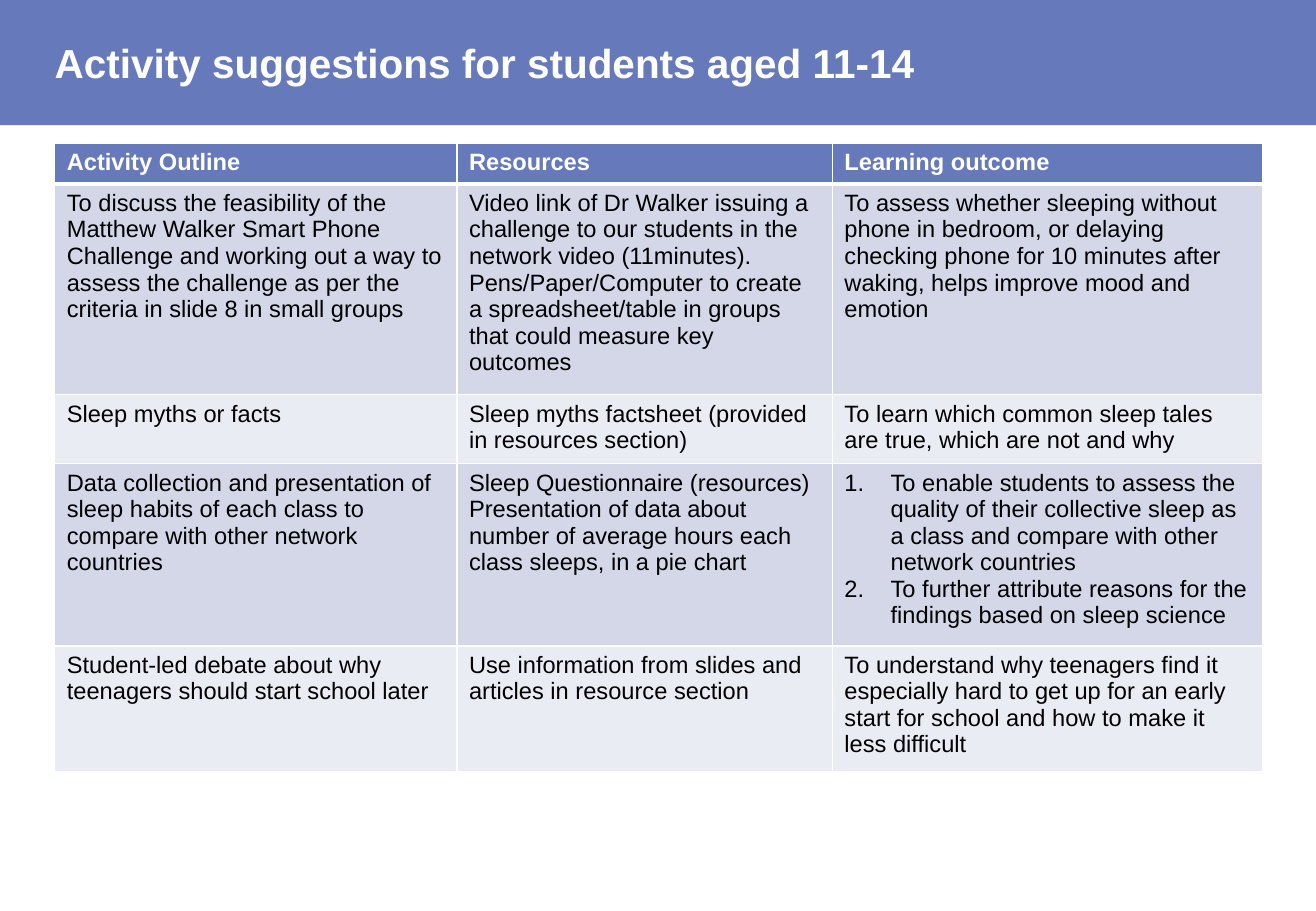
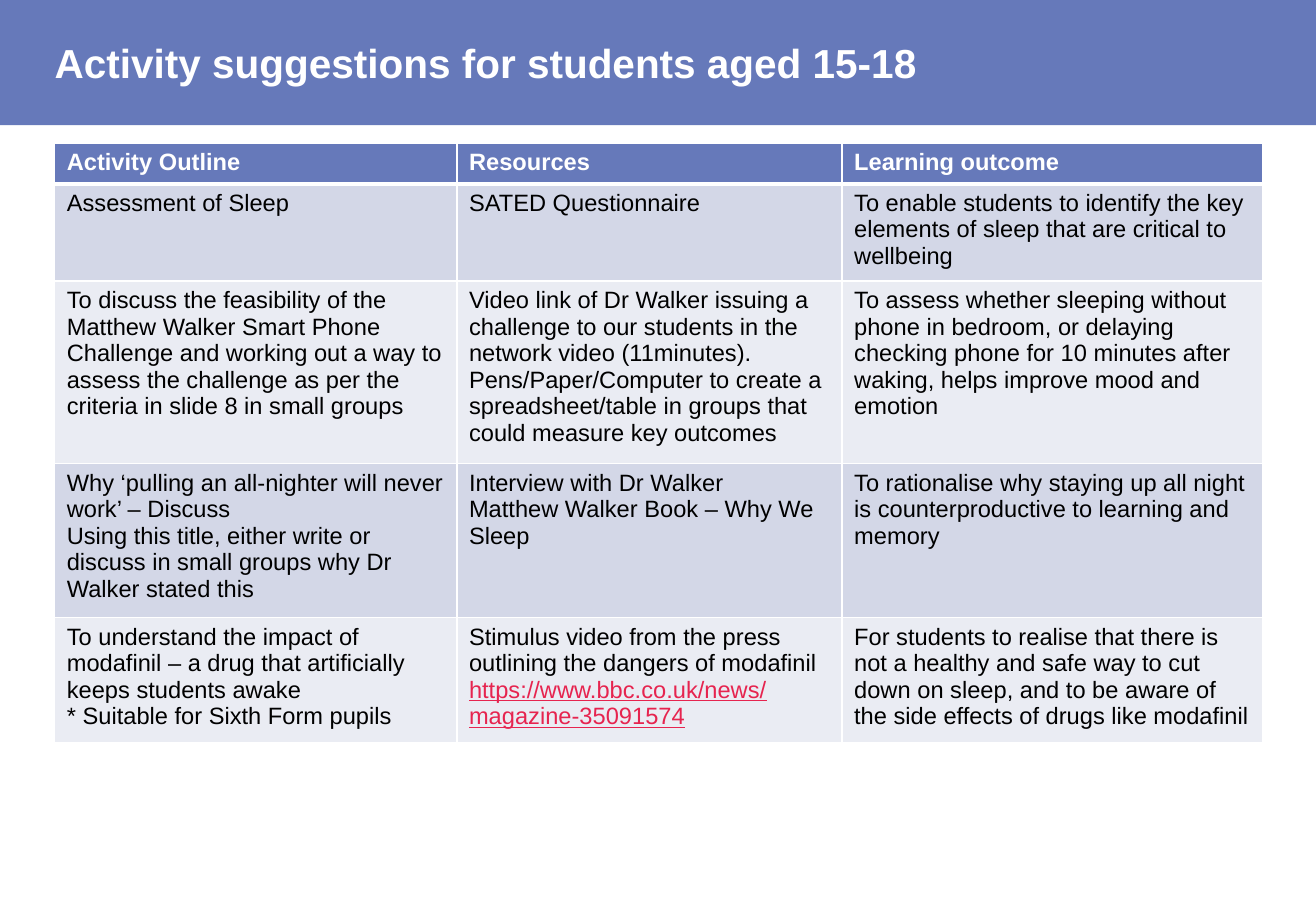
"""Build two slides of sleep activity suggestions, one per age group."""
import dataclasses

import lxml.etree
import pptx
import pptx.dml.color
import pptx.enum.shapes
import pptx.enum.text
import pptx.oxml.ns
import pptx.util

Inches = pptx.util.Inches
Pt = pptx.util.Pt
qn = pptx.oxml.ns.qn

FONT = "Arial"
BLUE, WHITE, BLACK, LINK = "6679BA", "FFFFFF", "000000", "E6244F"
ROW_FILLS = ("D3D7E7", "EAECF3")
SLIDE_W, SLIDE_H = 10.83, 7.5
BAND_H = 1.03
LEFT, CONTENT_W = 0.45, 9.94
TITLE_TOP, TITLE_H = 0.12, 0.79
TABLE_TOP, HEADER_H = 1.18, 0.31
THIN, THICK = 1, 3
HEADERS = ("Activity Outline", "Resources", "Learning outcome")


@dataclasses.dataclass(frozen=True)
class Activity:
    outline: str
    resources: str
    outcome: str
    height: float
    numbered_outcome: bool = False


@dataclasses.dataclass(frozen=True)
class Page:
    ages: str
    widths: tuple[float, ...]
    activities: tuple[Activity, ...]


PHONE_CHALLENGE = Activity(
    "To discuss the feasibility of the Matthew Walker Smart Phone Challenge and working out "
    "a way to assess the challenge as per the criteria in slide 8 in small groups",
    "Video link of Dr Walker issuing a challenge to our students in the network video (11minutes).\n"
    "Pens/Paper/Computer to create a spreadsheet/table in groups that could measure key outcomes",
    "To assess whether sleeping without phone in bedroom, or delaying checking phone for "
    "10 minutes after waking, helps improve mood and emotion",
    1.62,
)

PAGES = (
    Page("11-14", (3.31, 3.09, 3.54), (
        PHONE_CHALLENGE,
        Activity(
            "Sleep myths or facts",
            "Sleep myths factsheet (provided in resources section)",
            "To learn which common sleep tales are true, which are not and why",
            0.54,
        ),
        Activity(
            "Data collection and presentation of sleep habits of each class to compare "
            "with other network countries",
            "Sleep Questionnaire (resources)\n"
            "Presentation of data about number of average hours each class sleeps, in a pie chart",
            "To enable students to assess the quality of their collective sleep as a class "
            "and compare with other network countries\n"
            "To further attribute reasons for the findings based on sleep science",
            1.41,
            numbered_outcome=True,
        ),
        Activity(
            "Student-led debate about why teenagers should start school later",
            "Use information from slides and articles in resource section",
            "To understand why teenagers find it especially hard to get up for an early start "
            "for school and how to make it less difficult",
            0.97,
        ),
    )),
    Page("15-18", (3.31, 3.17, 3.46), (
        Activity(
            "Assessment of Sleep",
            "SATED Questionnaire",
            "To enable students to identify the key elements of sleep that are critical to wellbeing",
            0.75,
        ),
        dataclasses.replace(PHONE_CHALLENGE, height=1.41),
        Activity(
            "Why ‘pulling an all-nighter will never work’ – Discuss\n"
            "Using this title, either write or discuss in small groups why Dr Walker stated this",
            "Interview with Dr Walker\nMatthew Walker Book – Why We Sleep",
            "To rationalise why staying up all night is counterproductive to learning and memory",
            1.19,
        ),
        Activity(
            "To understand the impact of modafinil – a drug that artificially keeps students awake\n"
            "* Suitable for Sixth Form pupils",
            "Stimulus video from the press outlining the dangers of modafinil\n"
            "https://www.bbc.co.uk/news/magazine-35091574",
            "For students to realise that there is not a healthy and safe way to cut down on sleep, "
            "and to be aware of the side effects of drugs like modafinil",
            0.97,
        ),
    )),
)


def rgb(color: str) -> pptx.dml.color.RGBColor:
    return pptx.dml.color.RGBColor.from_string(color)


def write(tf, text: str, *, size: float = 14, color: str = BLACK,
          bold: bool = False, numbered: bool = False) -> None:
    for i, line in enumerate(text.split("\n")):
        p = tf.add_paragraph() if i else tf.paragraphs[0]
        if numbered:
            pPr = p._p.get_or_add_pPr()
            pPr.set("marL", str(Inches(0.38)))
            pPr.set("indent", str(-Inches(0.38)))
            lxml.etree.SubElement(pPr, qn("a:buFont"), typeface="+mj-lt")
            lxml.etree.SubElement(pPr, qn("a:buAutoNum"), type="arabicPeriod")
        is_link = line.startswith("https://")
        r = p.add_run()
        r.text = line
        r.font.name = FONT
        r.font.size = Pt(size)
        r.font.bold = bold
        r.font.underline = is_link
        r.font.color.rgb = rgb(LINK if is_link else color)


def style_cell(cell, fill: str, top: float = THIN, bottom: float = THIN) -> None:
    tcPr = cell._tc.get_or_add_tcPr()
    for side, width in (("L", THIN), ("R", THIN), ("T", top), ("B", bottom)):
        ln = lxml.etree.SubElement(tcPr, qn(f"a:ln{side}"), w=str(Pt(width)))
        solid = lxml.etree.SubElement(ln, qn("a:solidFill"))
        lxml.etree.SubElement(solid, qn("a:srgbClr"), val=WHITE)
    cell.fill.solid()
    cell.fill.fore_color.rgb = rgb(fill)


def add_title(s, text: str) -> None:
    sp = s.shapes.add_shape(pptx.enum.shapes.MSO_SHAPE.RECTANGLE,
                            0, 0, Inches(SLIDE_W), Inches(BAND_H))
    sp.shadow.inherit = False
    sp.fill.solid()
    sp.fill.fore_color.rgb = rgb(BLUE)
    sp.line.fill.background()
    tf = s.shapes.add_textbox(Inches(LEFT), Inches(TITLE_TOP),
                              Inches(CONTENT_W), Inches(TITLE_H)).text_frame
    tf.word_wrap = True
    tf.vertical_anchor = pptx.enum.text.MSO_ANCHOR.MIDDLE
    tf.margin_left = tf.margin_right = tf.margin_top = tf.margin_bottom = 0
    write(tf, text, size=24, color=WHITE, bold=True)


def add_activities(s, page: Page) -> None:
    heights = [HEADER_H] + [a.height for a in page.activities]
    table = s.shapes.add_table(len(heights), len(HEADERS), Inches(LEFT), Inches(TABLE_TOP),
                               Inches(CONTENT_W), Inches(sum(heights))).table
    for column, width in zip(table.columns, page.widths):
        column.width = Inches(width)
    for row, height in zip(table.rows, heights):
        row.height = Inches(height)
    for cell, header in zip(table.rows[0].cells, HEADERS):
        style_cell(cell, BLUE, bottom=THICK)
        write(cell.text_frame, header, color=WHITE, bold=True)
    for i, a in enumerate(page.activities):
        texts = (a.outline, a.resources, a.outcome)
        for j, (cell, text) in enumerate(zip(table.rows[i + 1].cells, texts)):
            style_cell(cell, ROW_FILLS[i % 2], top=THIN if i else THICK)
            write(cell.text_frame, text, numbered=a.numbered_outcome and j == 2)


def main() -> None:
    prs = pptx.Presentation()
    prs.slide_width, prs.slide_height = Inches(SLIDE_W), Inches(SLIDE_H)
    for page in PAGES:
        s = prs.slides.add_slide(prs.slide_layouts[6])
        add_title(s, f"Activity suggestions for students aged {page.ages}")
        add_activities(s, page)
    prs.save("out.pptx")


if __name__ == "__main__":
    main()
